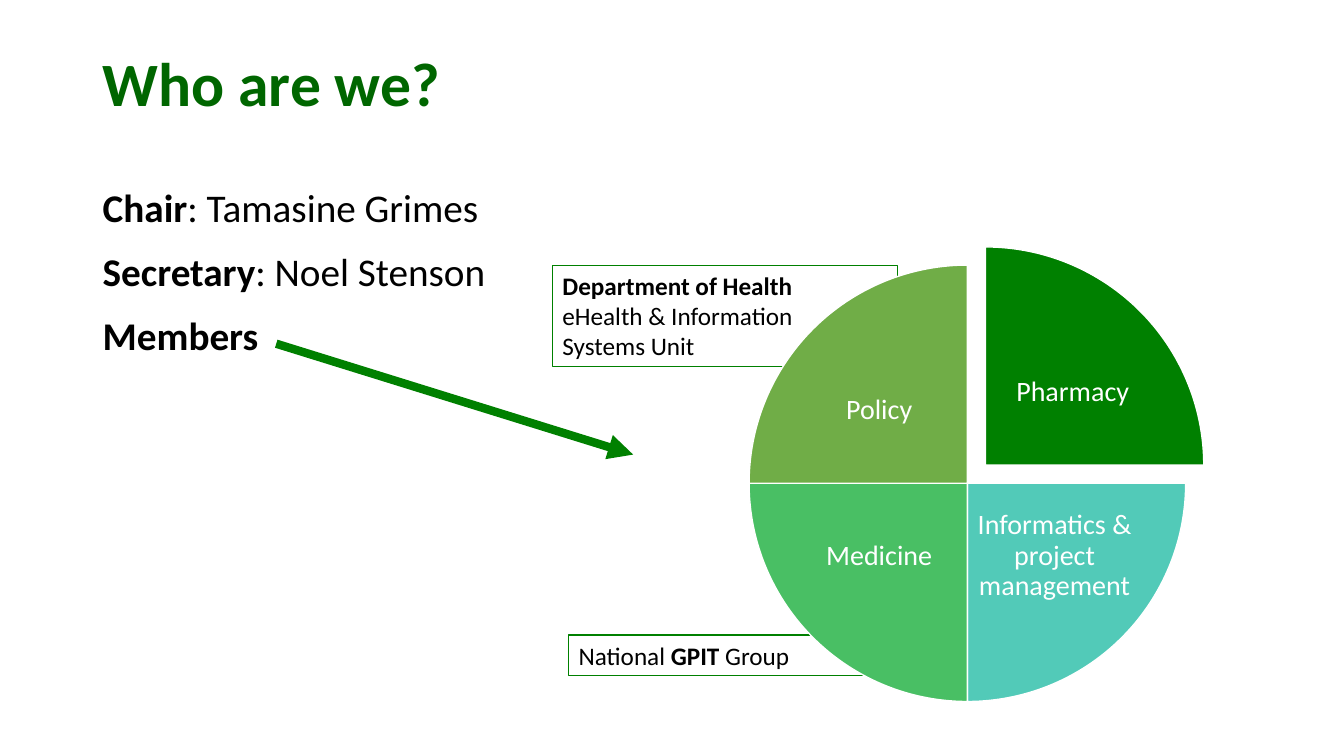
from lxml.etree import SubElement as Sub
from pptx import Presentation
from pptx.dml.color import RGBColor as Rgb
from pptx.enum.shapes import MSO_CONNECTOR as Conn, MSO_SHAPE as Kind
from pptx.enum.text import MSO_ANCHOR as Anchor, PP_ALIGN as Align
from pptx.oxml.ns import qn
from pptx.util import Pt

PX = 9144  # EMU, 100 px to the inch
BLACK = Rgb(0, 0, 0)
WHITE = Rgb(255, 255, 255)
GREEN = Rgb(0x00, 0x80, 0x00)
DARK = Rgb(0x00, 0x66, 0x00)
TEAL = Rgb(0x52, 0xCA, 0xB8)
MINT = Rgb(0x49, 0xBF, 0x64)
OLIVE = Rgb(0x70, 0xAD, 0x47)

QUARTER = 54  # 90 degrees in units of the pie adjustment
PIE_LEFT, PIE_TOP, PIE_SIZE = 743, 263, 433
PULL = 18


class Deck:
    font = "Calibri"

    def __init__(self, width, height):
        self.prs = Presentation()
        self.prs.slide_width = width * PX
        self.prs.slide_height = height * PX
        self.slide = self.prs.slides.add_slide(self.prs.slide_layouts[6])
        self.shapes = self.slide.shapes

    def text(self, box, paras, size, color=BLACK, anchor=Anchor.TOP,
             align=Align.LEFT, lead=1.0, after=0, inset=None):
        """Each paragraph is a list of (words, bold) runs; None is a line break."""
        shape = self.shapes.add_textbox(*(n * PX for n in box))
        frame = shape.text_frame
        frame.word_wrap = True
        frame.vertical_anchor = anchor
        if inset is not None:
            frame.margin_left = frame.margin_right = inset * PX
            frame.margin_top = frame.margin_bottom = inset * PX
        for i, runs in enumerate(paras):
            para = frame.add_paragraph() if i else frame.paragraphs[0]
            para.alignment = align
            para.line_spacing = lead
            para.space_after = Pt(after)
            for part in runs:
                if part is None:
                    para.add_line_break()
                    continue
                run = para.add_run()
                run.text, run.font.bold = part
                run.font.name = self.font
                run.font.size = Pt(size)
                run.font.color.rgb = color
        return shape

    def note(self, box, paras):
        shape = self.text(box, paras, 18)
        shape.line.color.rgb = GREEN
        shape.line.width = Pt(0.75)

    def slice(self, left, top, start, color):
        shape = self.shapes.add_shape(
            Kind.PIE, left * PX, top * PX, PIE_SIZE * PX, PIE_SIZE * PX)
        shape.adjustments[0] = start
        shape.adjustments[1] = (start + QUARTER) % (4 * QUARTER)
        shape.shadow.inherit = False
        shape.fill.solid()
        shape.fill.fore_color.rgb = color
        shape.line.color.rgb = WHITE
        shape.line.width = Pt(1)

    def label(self, left, top, words):
        self.text((left, top, 160, 129), [[(words, False)]], 20, WHITE,
                  Anchor.MIDDLE, Align.CENTER, 0.9, inset=3)

    def arrow(self, *ends):
        link = self.shapes.add_connector(
            Conn.STRAIGHT, *(n * PX for n in ends))
        link.line.color.rgb = GREEN
        link.line.width = Pt(6)
        Sub(link.line._get_or_add_ln(), qn("a:tailEnd"), type="triangle")
        Sub(link._element.spPr, qn("a:effectLst"))


def main():
    deck = Deck(1333, 750)
    deck.note((564, 630, 342, 40),
              [[("National ", False), ("GPIT", True), (" Group", False)]])
    deck.note((548, 263, 342, 101),
              [[("Department of Health", True)],
               [("eHealth & Information", False), None,
                ("Systems Unit", False)]])
    deck.text((92, 40, 1150, 91), [[("Who are we?", True)]], 44, DARK,
              Anchor.MIDDLE, lead=0.9)

    # words, colour, quarter clockwise from the right, label place, pull
    for words, color, turn, left, top, pull in (
            ("Pharmacy", GREEN, 3, 966, 343, PULL),
            ("Informatics & project management", TEAL, 0, 966, 487, 0),
            ("Medicine", MINT, 1, 792, 487, 0),
            ("Policy", OLIVE, 2, 792, 343, 0)):
        deck.slice(PIE_LEFT + pull, PIE_TOP - pull, turn * QUARTER, color)
        deck.label(left + pull, top - pull, words)

    deck.text((92, 177, 492, 185),
              [[("Chair", True), (": Tamasine Grimes", False)],
               [("Secretary", True), (": Noel Stenson", False)],
               [("Members", True)]], 28, after=12)
    deck.arrow(274, 341, 628, 451)
    deck.prs.save("out.pptx")


if __name__ == "__main__":
    main()
